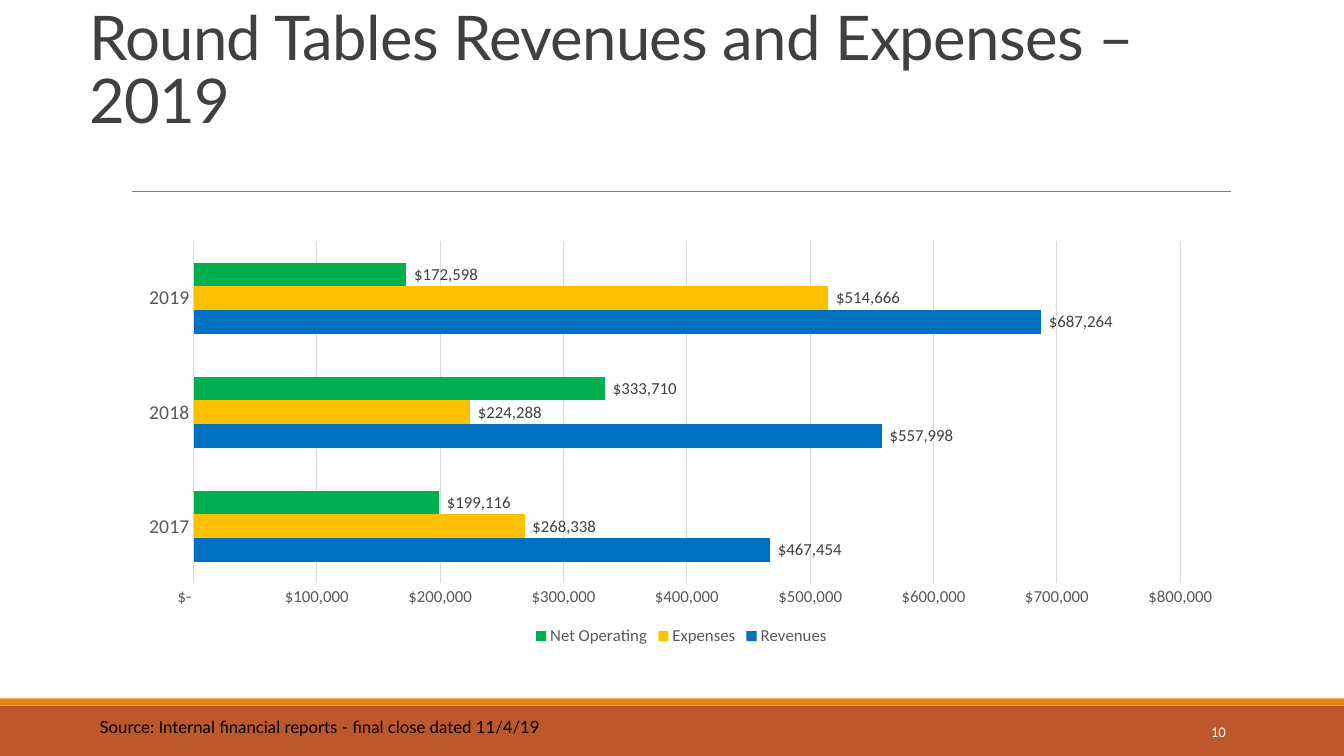
from dataclasses import dataclass

from lxml.etree import SubElement
from pptx import Presentation
from pptx.chart.data import CategoryChartData
from pptx.dml.color import RGBColor
from pptx.enum.chart import XL_CHART_TYPE as ChartType
from pptx.enum.chart import XL_LABEL_POSITION as LabelPosition
from pptx.enum.chart import XL_LEGEND_POSITION as LegendPosition
from pptx.enum.chart import XL_TICK_MARK as TickMark
from pptx.enum.shapes import MSO_CONNECTOR as Connector
from pptx.enum.shapes import MSO_SHAPE as Shape
from pptx.enum.text import MSO_ANCHOR as Anchor
from pptx.enum.text import PP_ALIGN as Align
from pptx.oxml import parse_xml
from pptx.oxml.ns import nsdecls, qn
from pptx.util import Inches, Pt

COLUMNS, ROWS = 80, 45
DOLLARS = '_("$"* #,##0_);_("$"* \\(#,##0\\);_("$"* "-"??_);_(@_)'


@dataclass(frozen=True)
class Theme:
    heading_font: str = "Lato"
    body_font: str = "Calibri"
    title_size: float = 44
    category_size: float = 14
    body_size: float = 12
    number_size: float = 10.5
    ink: str = "404040"
    axis_ink: str = "595959"
    black: str = "000000"
    white: str = "FFFFFF"
    rule: str = "808080"
    grid: str = "D9D9D9"
    footer: str = "BD582C"
    band: str = "E48312"
    revenues: str = "0070C0"
    expenses: str = "FFC000"
    net: str = "00B050"


def rgb(code):
    return RGBColor.from_string(code)


def style_font(font, name, size, color):
    font.name, font.size = name, Pt(size)
    font.color.rgb = rgb(color)


def style_line(line, color, width):
    line.color.rgb = rgb(color)
    line.width = Pt(width)


class SlideBuilder:
    def __init__(self, deck, theme):
        self.theme = theme
        self.column = deck.slide_width / COLUMNS
        self.row = deck.slide_height / ROWS
        self.shapes = deck.slides.add_slide(deck.slide_layouts[6]).shapes

    def place(self, left, top, width, height):
        """Turn grid columns and rows into slide lengths."""
        return (round(left * self.column), round(top * self.row),
                round(width * self.column), round(height * self.row))

    def bar(self, top, height, color):
        bar = self.shapes.add_shape(Shape.RECTANGLE, *self.place(0, top, COLUMNS, height))
        bar.shadow.inherit = False
        bar.fill.solid()
        bar.fill.fore_color.rgb = rgb(color)
        bar.line.fill.background()

    def rule(self, left, right, row):
        x, y, length, _ = self.place(left, row, right - left, 0)
        rule = self.shapes.add_connector(Connector.STRAIGHT, x, y, x + length, y)
        style_line(rule.line, self.theme.rule, 0.5)
        SubElement(rule._element.spPr, qn("a:effectLst"))

    def text(self, area, words, font, size, color, anchor=Anchor.TOP,
             align=Align.LEFT, leading=1.0, tracking=0):
        """Add one paragraph; tracking is in hundredths of a point."""
        frame = self.shapes.add_textbox(*self.place(*area)).text_frame
        frame.word_wrap = True
        frame.vertical_anchor = anchor
        frame.text = words
        paragraph = frame.paragraphs[0]
        paragraph.alignment, paragraph.line_spacing = align, leading
        for run in paragraph.runs:
            style_font(run.font, font, size, color)
            if tracking:
                run._r.get_or_add_rPr().set("spc", str(tracking))

    def bar_chart(self, area, categories, series, plot_area):
        """Add a clustered bar chart; series maps a name to (values, color)."""
        theme = self.theme
        data = CategoryChartData(number_format=DOLLARS)
        data.categories = categories
        for name, (values, _) in series.items():
            data.add_series(name, values)
        chart = self.shapes.add_chart(
            ChartType.BAR_CLUSTERED, *self.place(*area), data).chart
        style_font(chart.font, theme.body_font, theme.body_size, theme.axis_ink)
        chart.has_title = False
        chart.has_legend = True
        chart.legend.position = LegendPosition.BOTTOM
        chart.legend.include_in_layout = False
        style_font(chart.legend.font, theme.body_font, theme.body_size, theme.axis_ink)
        self.style_axes(chart)
        self.fix_plot_area(chart, plot_area)

        plot = chart.plots[0]
        plot.gap_width, plot.overlap, plot.vary_by_categories = 182, 0, False
        for bars, (_, color) in zip(plot.series, series.values()):
            bars.format.fill.solid()
            bars.format.fill.fore_color.rgb = rgb(color)
            labels = bars.data_labels
            labels.show_value = True
            labels.position = LabelPosition.OUTSIDE_END
            labels.number_format, labels.number_format_is_linked = DOLLARS, False
            style_font(labels.font, theme.body_font, theme.body_size, theme.ink)

    def style_axes(self, chart):
        theme = self.theme
        years, dollars = chart.category_axis, chart.value_axis
        for axis, size in ((years, theme.category_size), (dollars, theme.body_size)):
            axis.major_tick_mark = axis.minor_tick_mark = TickMark.NONE
            style_font(axis.tick_labels.font, theme.body_font, size, theme.axis_ink)
        style_line(years.format.line, theme.grid, 0.75)
        dollars.format.line.fill.background()
        style_line(dollars.major_gridlines.format.line, theme.grid, 0.75)
        dollars.minimum_scale, dollars.maximum_scale = 0, 800000
        dollars.major_unit = 100000
        dollars.tick_labels.number_format = DOLLARS
        dollars.tick_labels.number_format_is_linked = False

    def fix_plot_area(self, chart, shares):
        """Pin the inner plot area to shares of the chart: x, y, w, h."""
        area = chart._chartSpace.chart.plotArea
        for automatic in area.findall(qn("c:layout")):
            area.remove(automatic)
        modes = '<c:xMode val="edge"/><c:yMode val="edge"/>'
        sizes = "".join(f'<c:{key} val="{share}"/>' for key, share in zip("xywh", shares))
        area.insert(0, parse_xml(
            f'<c:layout {nsdecls("c")}><c:manualLayout><c:layoutTarget val="inner"/>'
            f"{modes}{sizes}</c:manualLayout></c:layout>"))


def main():
    deck = Presentation()
    deck.slide_width, deck.slide_height = Inches(13.33), Inches(7.5)
    theme = Theme()
    slide = SlideBuilder(deck, theme)

    slide.bar(42, 3, theme.footer)
    slide.bar(41.58, 0.42, theme.band)
    slide.rule(7.86, 73.26, 11.4)
    slide.text((4.74, 1.86, 71.76, 6.54), "Round Tables Revenues and Expenses – 2019",
               theme.heading_font, theme.title_size, theme.ink,
               anchor=Anchor.BOTTOM, leading=0.85, tracking=-50)
    slide.text((64.98, 42.36, 8.58, 2.4), "10", theme.body_font, theme.number_size,
               theme.white, anchor=Anchor.MIDDLE, align=Align.RIGHT)
    slide.bar_chart(
        (7.56, 13.86, 66, 24.84), ["2017", "2018", "2019"],
        {"Revenues": ((467454, 557998, 687264), theme.revenues),
         "Expenses": ((268338, 224288, 514666), theme.expenses),
         "Net Operating": ((199116, 333710, 172598), theme.net)},
        plot_area=(0.06, 0.02, 0.89, 0.82))
    slide.text((5.34, 42.36, 29.52, 1.8),
               "Source: Internal financial reports - final close dated 11/4/19",
               theme.heading_font, theme.body_size, theme.black)
    deck.save("out.pptx")


if __name__ == "__main__":
    main()
